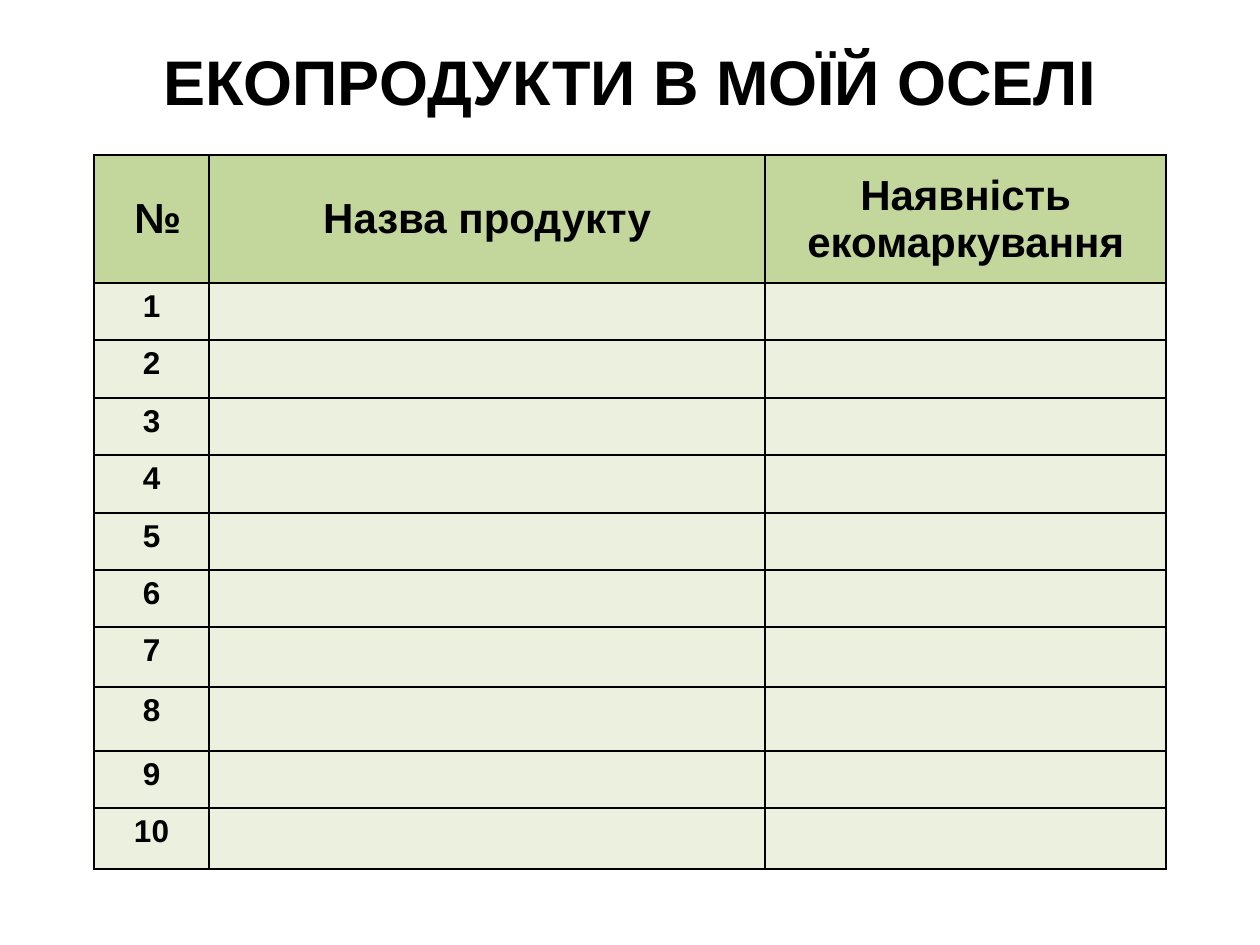
from dataclasses import dataclass

from lxml.etree import SubElement
from pptx import Presentation
from pptx.dml.color import RGBColor as Rgb
from pptx.enum.text import MSO_ANCHOR as Anchor, PP_ALIGN as Align
from pptx.oxml.ns import qn
from pptx.slide import Slide
from pptx.table import _Cell as Cell
from pptx.text.text import TextFrame
from pptx.util import Emu, Pt

PX = 914400 // 126


@dataclass(frozen=True)
class Theme:
    font: str = "Arial"
    ink: str = "000000"
    header_fill: str = "C3D69B"
    body_fill: str = "EBF1DE"
    title_size: int = 36
    header_size: int = 24
    number_size: int = 18
    border_width: int = 1


@dataclass(frozen=True)
class Column:
    heading: str
    width: int
    left_margin: int = 13


@dataclass(frozen=True)
class Box:
    left: int
    top: int
    width: int
    height: int

    def emu(self) -> list[Emu]:
        return [px(n) for n in (self.left, self.top, self.width, self.height)]


THEME = Theme()
TITLE = "ЕКОПРОДУКТИ В МОЇЙ ОСЕЛІ"
TITLE_BOX = Box(129, 36, 1002, 90)
COLUMNS = [
    Column("№", 115, left_margin=25),
    Column("Назва продукту", 556),
    Column("Наявність\nекомаркування", 401),
]
HEADER_HEIGHT = 128
PRODUCT_HEIGHTS = [57, 58, 57, 58, 57, 57, 60, 64, 57, 61]
TABLE_BOX = Box(94, 155, sum(column.width for column in COLUMNS),
                HEADER_HEIGHT + sum(PRODUCT_HEIGHTS))


def px(length: int) -> Emu:
    return Emu(length * PX)


def write(frame: TextFrame, text: str, size: int) -> None:
    """Fill a frame with centred bold text, one paragraph per line."""
    frame.text = text
    font_values = {"name": THEME.font, "size": Pt(size), "bold": True}
    for paragraph in frame.paragraphs:
        paragraph.alignment = Align.CENTER
        for run in paragraph.runs:
            for key, value in font_values.items():
                setattr(run.font, key, value)
            run.font.color.rgb = Rgb.from_string(THEME.ink)


def style_cell(cell: Cell, fill: str) -> None:
    """Give a cell its fill and a border on all four sides."""
    cell.fill.solid()
    cell.fill.fore_color.rgb = Rgb.from_string(fill)
    properties = cell._tc.get_or_add_tcPr()
    for index, side in enumerate(("a:lnL", "a:lnR", "a:lnT", "a:lnB")):
        border = SubElement(properties, qn(side), w=str(Pt(THEME.border_width)))
        ink = SubElement(border, qn("a:solidFill"))
        SubElement(ink, qn("a:srgbClr"), val=THEME.ink)
        properties.insert(index, border)  # borders precede the fill


def draw_title(slide: Slide) -> None:
    frame = slide.shapes.add_textbox(*TITLE_BOX.emu()).text_frame
    frame.word_wrap = True
    write(frame, TITLE, THEME.title_size)


def draw_table(slide: Slide) -> None:
    heights = [HEADER_HEIGHT, *PRODUCT_HEIGHTS]
    table = slide.shapes.add_table(
        len(heights), len(COLUMNS), *TABLE_BOX.emu()).table
    for row, height in zip(table.rows, heights):
        row.height = px(height)

    # Header row
    for index, column in enumerate(COLUMNS):
        table.columns[index].width = px(column.width)
        heading = table.cell(0, index)
        style_cell(heading, THEME.header_fill)
        heading.vertical_anchor = Anchor.MIDDLE
        heading.margin_left = px(column.left_margin)
        write(heading.text_frame, column.heading, THEME.header_size)

    # Numbered rows, left blank for the products
    for number in range(1, len(heights)):
        for cell in table.rows[number].cells:
            style_cell(cell, THEME.body_fill)
        write(table.cell(number, 0).text_frame, str(number), THEME.number_size)


def main() -> None:
    deck = Presentation()
    deck.slide_width, deck.slide_height = px(1260), px(945)
    slide = deck.slides.add_slide(deck.slide_layouts[6])
    draw_table(slide)
    draw_title(slide)
    deck.save("out.pptx")


if __name__ == "__main__":
    main()
